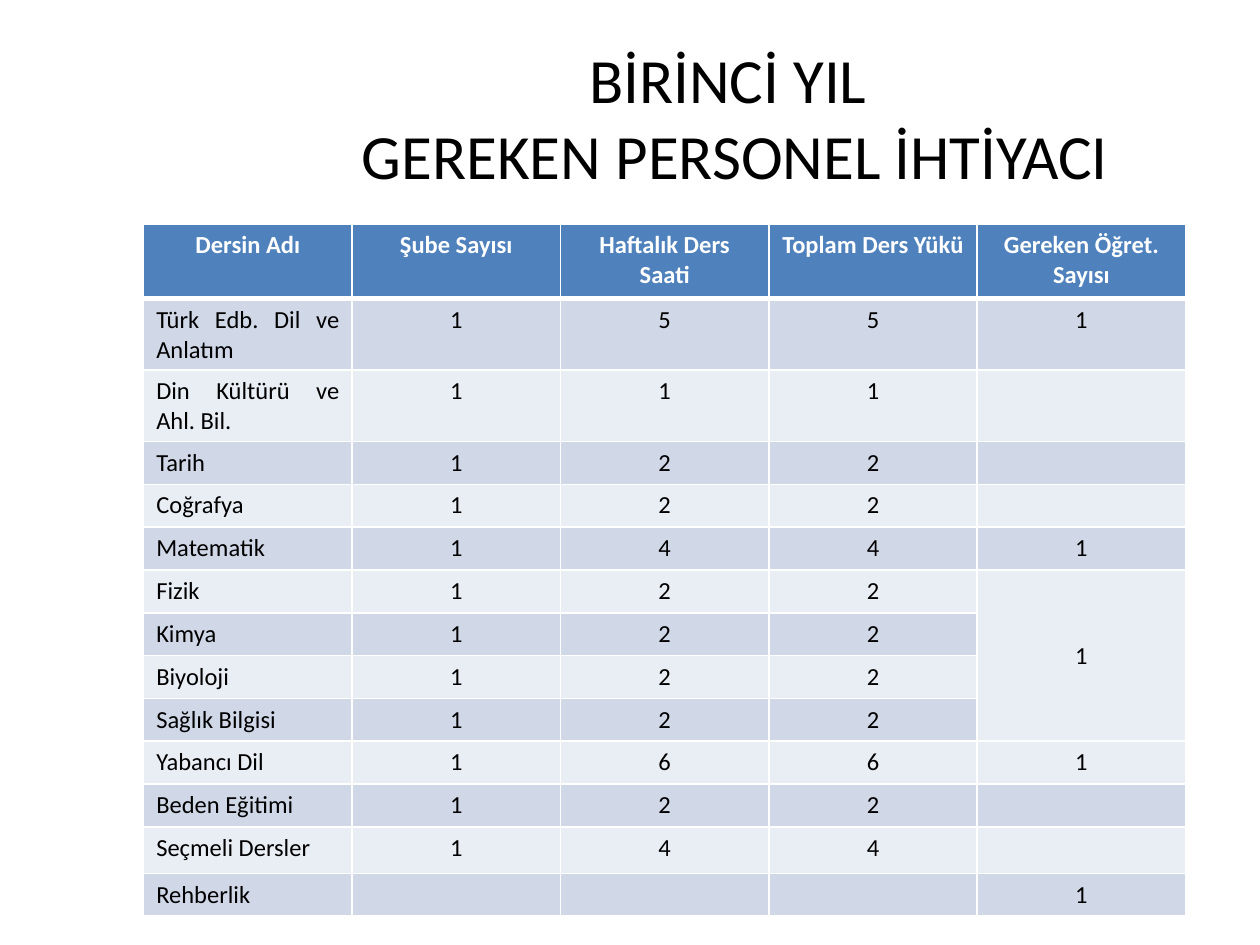
import lxml.etree
import pptx
import pptx.dml.color
import pptx.enum.text
import pptx.oxml.ns
import pptx.util

ALIGN = pptx.enum.text.PP_ALIGN
ANCHOR = pptx.enum.text.MSO_ANCHOR

HEADINGS = ["Dersin Adı", "Şube Sayısı", "Haftalık Ders Saati",
            "Toplam Ders Yükü", "Gereken Öğret. Sayısı"]
# Lesson, classes, weekly hours, total load, teachers needed
LESSONS = [
    ["Türk Edb. Dil ve Anlatım", "1", "5", "5", "1"],
    ["Din Kültürü ve Ahl. Bil.", "1", "1", "1", ""],
    ["Tarih", "1", "2", "2", ""],
    ["Coğrafya", "1", "2", "2", ""],
    ["Matematik", "1", "4", "4", "1"],
    ["Fizik", "1", "2", "2", "1"],
    ["Kimya", "1", "2", "2", ""],
    ["Biyoloji", "1", "2", "2", ""],
    ["Sağlık Bilgisi", "1", "2", "2", ""],
    ["Yabancı Dil", "1", "6", "6", "1"],
    ["Beden Eğitimi", "1", "2", "2", ""],
    ["Seçmeli Dersler", "1", "4", "4", ""],
    ["Rehberlik", "", "", "", "1"],
]
ROW_HEIGHTS = [0.59] + [0.48] * 2 + [0.34] * 9 + [0.37, 0.34]
SCIENCE_ROWS = (6, 9)  # these lessons share one teacher


def color(hex_text):
    return pptx.dml.color.RGBColor.from_string(hex_text)


class SlideBuilder:
    font = "Calibri"
    ink, paper = "000000", "FFFFFF"
    header, bands = "4F81BD", ["D0D8E8", "E9EDF4"]
    title_size, table_size = 36, 14

    def __init__(self, deck):
        self.deck = deck
        self.slide = deck.slides.add_slide(deck.slide_layouts[6])

    def place(self, left, top, width, height):
        """Turn shares of the slide into lengths."""
        across, down = self.deck.slide_width, self.deck.slide_height
        return (int(left * across), int(top * down),
                int(width * across), int(height * down))

    def set_text(self, para, text, size, ink, align, bold=False):
        para.text = text
        para.alignment = align
        para.font.name = self.font
        para.font.size = pptx.util.Pt(size)
        para.font.bold = bold
        para.font.color.rgb = color(ink)
        if not text:  # keeps empty cells as low as the filled ones
            end = lxml.etree.SubElement(para._p, pptx.oxml.ns.qn("a:endParaRPr"))
            end.set("sz", str(size * 100))

    def title(self, text, *share):
        frame = self.slide.shapes.add_textbox(*self.place(*share)).text_frame
        frame.word_wrap = True
        frame.vertical_anchor = ANCHOR.MIDDLE
        self.set_text(frame.paragraphs[0], text, self.title_size, self.ink, ALIGN.CENTER)

    def borders(self, cell, bottom):
        properties = cell._tc.get_or_add_tcPr()
        for side, width in (("L", 1), ("R", 1), ("T", 1), ("B", bottom)):
            line = lxml.etree.SubElement(properties, pptx.oxml.ns.qn("a:ln" + side))
            line.set("w", str(pptx.util.Pt(width)))
            fill = lxml.etree.SubElement(line, pptx.oxml.ns.qn("a:solidFill"))
            tint = lxml.etree.SubElement(fill, pptx.oxml.ns.qn("a:srgbClr"))
            tint.set("val", self.paper)

    def cell(self, cell, text, row, column):
        heading = row == 0
        align = ALIGN.CENTER if heading or column else ALIGN.JUSTIFY
        self.set_text(cell.text_frame.paragraphs[0], text, self.table_size,
                      self.paper if heading else self.ink, align, heading)
        self.borders(cell, 3 if heading else 1)
        cell.fill.solid()
        cell.fill.fore_color.rgb = color(
            self.header if heading else self.bands[(row - 1) % 2])

    def table(self, rows, heights, *share):
        table = self.slide.shapes.add_table(
            len(rows), len(rows[0]), *self.place(*share)).table
        table.horz_banding = False
        for row, (texts, height) in enumerate(zip(rows, heights)):
            table.rows[row].height = pptx.util.Inches(height)
            for column, text in enumerate(texts):
                self.cell(table.cell(row, column), text, row, column)
        return table


def main():
    deck = pptx.Presentation()
    deck.slide_width = pptx.util.Inches(10)
    deck.slide_height = pptx.util.Inches(7.5)
    builder = SlideBuilder(deck)

    # Title
    builder.title("BİRİNCİ YIL \vGEREKEN PERSONEL İHTİYACI",
                  2.17 / 10, 0.3 / 7.5, 7.33 / 10, 1.25 / 7.5)

    # Staff table, with one merged cell for the science lessons
    table = builder.table([HEADINGS] + LESSONS, ROW_HEIGHTS,
                          1.14 / 10, 1.78 / 7.5, 8.27 / 10, 5.46 / 7.5)
    first, last = SCIENCE_ROWS
    shared = table.cell(first, 4)
    shared.merge(table.cell(last, 4))
    shared.vertical_anchor = ANCHOR.MIDDLE

    deck.save("out.pptx")


if __name__ == "__main__":
    main()
